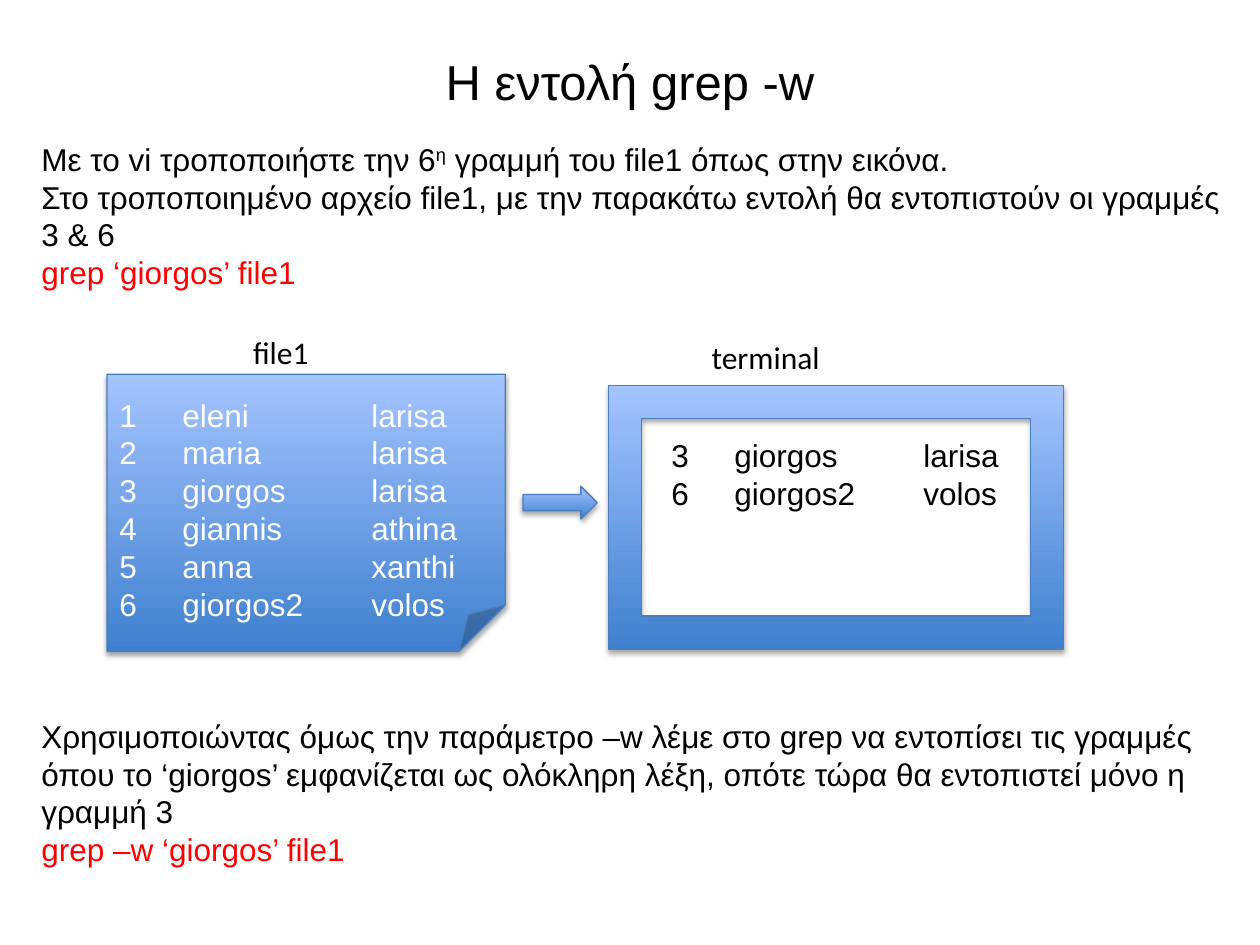
from lxml import etree
from pptx import Presentation
from pptx.dml.color import RGBColor
from pptx.enum.shapes import MSO_SHAPE
from pptx.enum.text import MSO_ANCHOR, PP_ALIGN
from pptx.oxml.ns import qn
from pptx.util import Inches, Pt

FOLDED, ARROW, FRAME = MSO_SHAPE.FOLDED_CORNER, MSO_SHAPE.RIGHT_ARROW, MSO_SHAPE.FRAME
TOP, MIDDLE = MSO_ANCHOR.TOP, MSO_ANCHOR.MIDDLE
LEFT, CENTER = PP_ALIGN.LEFT, PP_ALIGN.CENTER

COLORS = {"ink": "000000", "command": "FF0000", "paper": "FFFFFF",
          "deep": "3F80CE", "light": "A4C4FF", "edge": "4B7EBC"}
CELL = 0.1
COLUMNS, ROWS = 100, 75
TAB_STOPS = (0.5, 2)
SHADOW = {"blurRad": Pt(3.1), "dist": Pt(1.8), "dir": 90 * 60000, "rotWithShape": 0}

FILE_LINES = ["1\teleni\tlarisa", "2\tmaria\tlarisa", "3\tgiorgos\tlarisa",
              "4\tgiannis\tathina", "5\tanna\txanthi", "6\tgiorgos2\tvolos"]
FOUND_LINES = [FILE_LINES[2], FILE_LINES[5]]
INTRO = [
    ["Με το vi τροποποιήστε την 6", "^η", " γραμμή του file1 όπως στην εικόνα."],
    ["Στο τροποποιημένο αρχείο file1, με την παρακάτω εντολή θα εντοπιστούν "
     "οι γραμμές 3 & 6"],
]
CLOSING = [["Χρησιμοποιώντας όμως την παράμετρο –w λέμε στο grep να εντοπίσει τις γραμμές "
            "όπου το ‘giorgos’ εμφανίζεται ως ολόκληρη λέξη, οπότε τώρα θα εντοπιστεί "
            "μόνο η γραμμή 3"]]


def color(name):
    """Return the named colour."""
    return RGBColor.from_string(COLORS[name])


def place(area):
    """Turn grid columns and rows into lengths."""
    return [Inches(cells * CELL) for cells in area]


def add_tabs(para):
    """Give a paragraph the column stops of a listing."""
    tabs = etree.SubElement(para._p.get_or_add_pPr(), qn("a:tabLst"))
    for stop in TAB_STOPS:
        etree.SubElement(tabs, qn("a:tab"), pos=str(Inches(stop)), algn="l")


def add_spans(para, parts, ink="ink", size=18, face="Arial"):
    """Write the parts of a paragraph, raising those marked with a caret."""
    for part in parts:
        span = para.add_run()
        span.text = part.removeprefix("^")
        for key, value in {"size": Pt(size), "name": face}.items():
            setattr(span.font, key, value)
        span.font.color.rgb = color(ink)
        if part.startswith("^"):
            span._r.get_or_add_rPr().set("baseline", "30000")


def write(frame, paragraphs, align=LEFT, anchor=TOP, wrap=True, tabs=False, **style):
    """Fill a text frame with paragraphs in one style."""
    for key, value in {"word_wrap": wrap, "vertical_anchor": anchor}.items():
        setattr(frame, key, value)
    for index, parts in enumerate(paragraphs):
        para = frame.add_paragraph() if index else frame.paragraphs[0]
        para.alignment = align
        if tabs:
            add_tabs(para)
        add_spans(para, parts, **style)


def add_text(page, area, paragraphs, **style):
    """Place a text box on the grid."""
    frame = page.shapes.add_textbox(*place(area)).text_frame
    write(frame, paragraphs, **style)
    return frame


def add_explanation(page, area, paragraphs, command):
    """Place body text that ends with a command."""
    frame = add_text(page, area, paragraphs)
    add_spans(frame.add_paragraph(), [command], ink="command")


def add_glossy(page, kind, area):
    """Place a shape with a blue gradient and a soft shadow."""
    shape = page.shapes.add_shape(kind, *place(area))
    shape.fill.gradient()
    shape.fill.gradient_angle = 90
    for stop, name in zip(shape.fill.gradient_stops, ("deep", "light")):
        stop.color.rgb = color(name)
    shape.line.color.rgb = color("edge")
    shape.line.width = Pt(0.75)
    shape.shadow.inherit = False
    effects = shape._element.spPr.find(qn("a:effectLst"))
    outer = etree.SubElement(effects, qn("a:outerShdw"),
                             {key: str(value) for key, value in SHADOW.items()})
    tone = etree.SubElement(outer, qn("a:srgbClr"), val=COLORS["ink"])
    etree.SubElement(tone, qn("a:alpha"), val="35000")
    return shape


def add_label(page, area, text):
    """Place the caption above a panel."""
    add_text(page, area, [[text]], wrap=False, face="Calibri")


def add_file(page, area):
    """Place the file sheet with its lines and caption."""
    left, top, _, _ = area
    frame = add_glossy(page, FOLDED, area).text_frame
    frame.margin_top = Inches(0.17)
    write(frame, [[line] for line in FILE_LINES], tabs=True, ink="paper")
    add_label(page, (left + 10.6, top - 3.8, 6.5, 4), "file1")


def add_terminal(page, area):
    """Place the terminal with its output and caption."""
    left, top, width, _ = area
    add_glossy(page, FRAME, area)
    add_text(page, (left + 4, top + 3.5, width - 1.2, 10.1),
             [[line] for line in FOUND_LINES], tabs=True)
    add_label(page, (left + 7.2, top - 4.3, 10.7, 4), "terminal")


def main():
    """Build and save the slide."""
    deck = Presentation()
    deck.slide_width, deck.slide_height = place((COLUMNS, ROWS))
    page = deck.slides.add_slide(deck.slide_layouts[6])
    add_text(page, (5, 3, COLUMNS - 10, 6.8), [["Η εντολή grep -w"]],
             align=CENTER, anchor=MIDDLE, size=28)
    add_explanation(page, (2.3, 10.6, 96.1, 13.1), INTRO, "grep ‘giorgos’ file1")
    add_file(page, (8.5, 29.7, 31.6, 22))
    add_glossy(page, ARROW, (41.5, 38.6, 5.9, 2.6))
    add_terminal(page, (48.3, 30.6, 36.1, 20.9))
    add_explanation(page, (2.3, 56.4, 96.1, 13.1), CLOSING, "grep –w ‘giorgos’ file1")
    deck.save("out.pptx")


if __name__ == "__main__":
    main()
